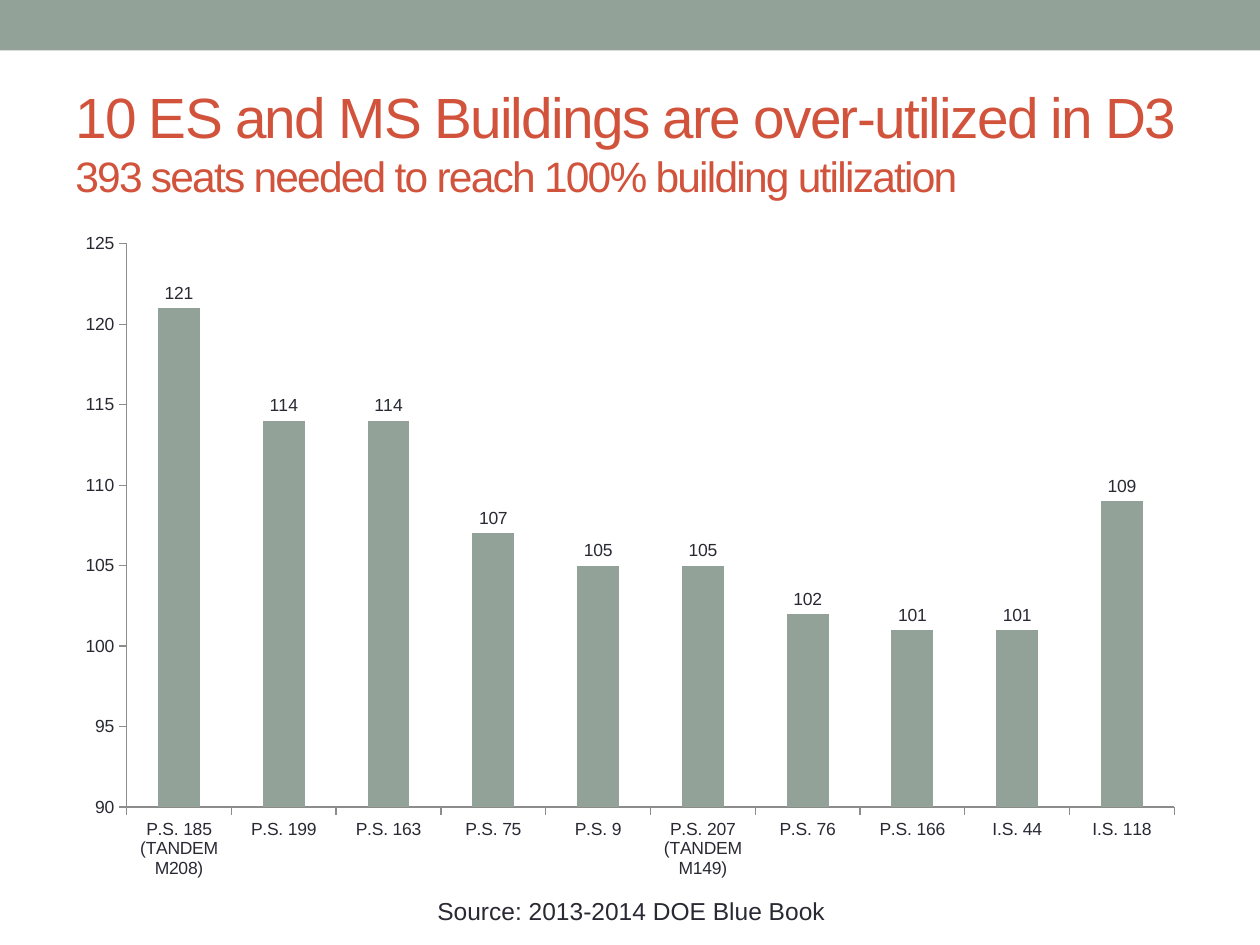
from dataclasses import dataclass

from pptx import Presentation
from pptx import util as u
from pptx.chart.data import CategoryChartData
from pptx.dml.color import RGBColor
from pptx.enum import chart as ch, shapes, text


@dataclass(frozen=True)
class Theme:
    font: str = "Arial"
    sage: RGBColor = RGBColor.from_string("93A299")
    rust: RGBColor = RGBColor.from_string("D2533C")
    ink: RGBColor = RGBColor.from_string("292934")
    axis: RGBColor = RGBColor.from_string("8C8C8C")
    headline: float = 32.4
    subhead: float = 24.3
    source: float = 14
    chart: float = 10


def apply(target, formats):
    for name, value in formats.items():
        setattr(target, name, value)


class SlideBuilder:
    """Draws styled elements on the current slide."""

    def __init__(self, slide, theme):
        self.slide = slide
        self.theme = theme

    def style_font(self, font, size, color):
        apply(font, {"name": self.theme.font, "size": u.Pt(size), "bold": False})
        font.color.rgb = color

    def band(self, *box):
        band = self.slide.shapes.add_shape(shapes.MSO_SHAPE.RECTANGLE, *map(u.Inches, box))
        band.shadow.inherit = False
        band.fill.solid()
        band.fill.fore_color.rgb = self.theme.sage
        band.line.fill.background()

    def words(self, box, lines, color, align, anchor, spacing=0):
        frame = self.slide.shapes.add_textbox(*map(u.Inches, box)).text_frame
        apply(frame, {"word_wrap": True, "vertical_anchor": anchor})
        paragraph = frame.paragraphs[0]
        paragraph.alignment = align
        for index, (line, size) in enumerate(lines):
            if index:
                paragraph.add_line_break()
            run = paragraph.add_run()
            run.text = line
            self.style_font(run.font, size, color)
            if spacing:
                run.font._element.set("spc", str(spacing * 100))

    def columns(self, box, series_name, utilization):
        data = CategoryChartData()
        data.categories = list(utilization)
        data.add_series(series_name, list(utilization.values()))
        chart = self.slide.shapes.add_chart(
            ch.XL_CHART_TYPE.COLUMN_CLUSTERED, *map(u.Inches, box), data).chart
        apply(chart, {"has_legend": False, "has_title": False})
        self.style_font(chart.font, self.theme.chart, self.theme.ink)

        plot = chart.plots[0]
        apply(plot, {"gap_width": 150, "vary_by_categories": False, "has_data_labels": True})
        apply(plot.data_labels, {"show_value": True,
                                 "position": ch.XL_LABEL_POSITION.OUTSIDE_END})
        bars = plot.series[0].format.fill
        bars.solid()
        bars.fore_color.rgb = self.theme.sage

        for axis in (chart.category_axis, chart.value_axis):
            apply(axis, {"has_major_gridlines": False,
                         "major_tick_mark": ch.XL_TICK_MARK.OUTSIDE,
                         "minor_tick_mark": ch.XL_TICK_MARK.NONE})
            axis.format.line.color.rgb = self.theme.axis
            axis.format.line.width = u.Pt(0.75)
        apply(chart.value_axis, {"minimum_scale": 90, "maximum_scale": 125, "major_unit": 5})


def main():
    deck = Presentation()
    apply(deck, {"slide_width": u.Inches(10), "slide_height": u.Inches(7.5)})
    theme = Theme()
    builder = SlideBuilder(deck.slides.add_slide(deck.slide_layouts[6]), theme)

    builder.band(0, 0, 10, 0.4)
    builder.words(
        (0.5, 0.58, 9, 1.08),
        [("10 ES and MS Buildings are over-utilized in D3", theme.headline),
         ("393 seats needed to reach 100% building utilization", theme.subhead)],
        theme.rust, text.PP_ALIGN.LEFT, text.MSO_ANCHOR.MIDDLE, spacing=-1)
    builder.words(
        (0.27, 7.06, 9.48, 0.34), [("Source: 2013-2014 DOE Blue Book", theme.source)],
        theme.ink, text.PP_ALIGN.CENTER, text.MSO_ANCHOR.TOP)
    builder.columns((0.5, 1.75, 9, 5.33), "Series 1", {
        "P.S. 185 (TANDEM M208)": 121, "P.S. 199": 114, "P.S. 163": 114,
        "P.S. 75": 107, "P.S. 9": 105, "P.S. 207 (TANDEM M149)": 105,
        "P.S. 76": 102, "P.S. 166": 101, "I.S. 44": 101, "I.S. 118": 109})

    deck.save("out.pptx")


if __name__ == "__main__":
    main()
